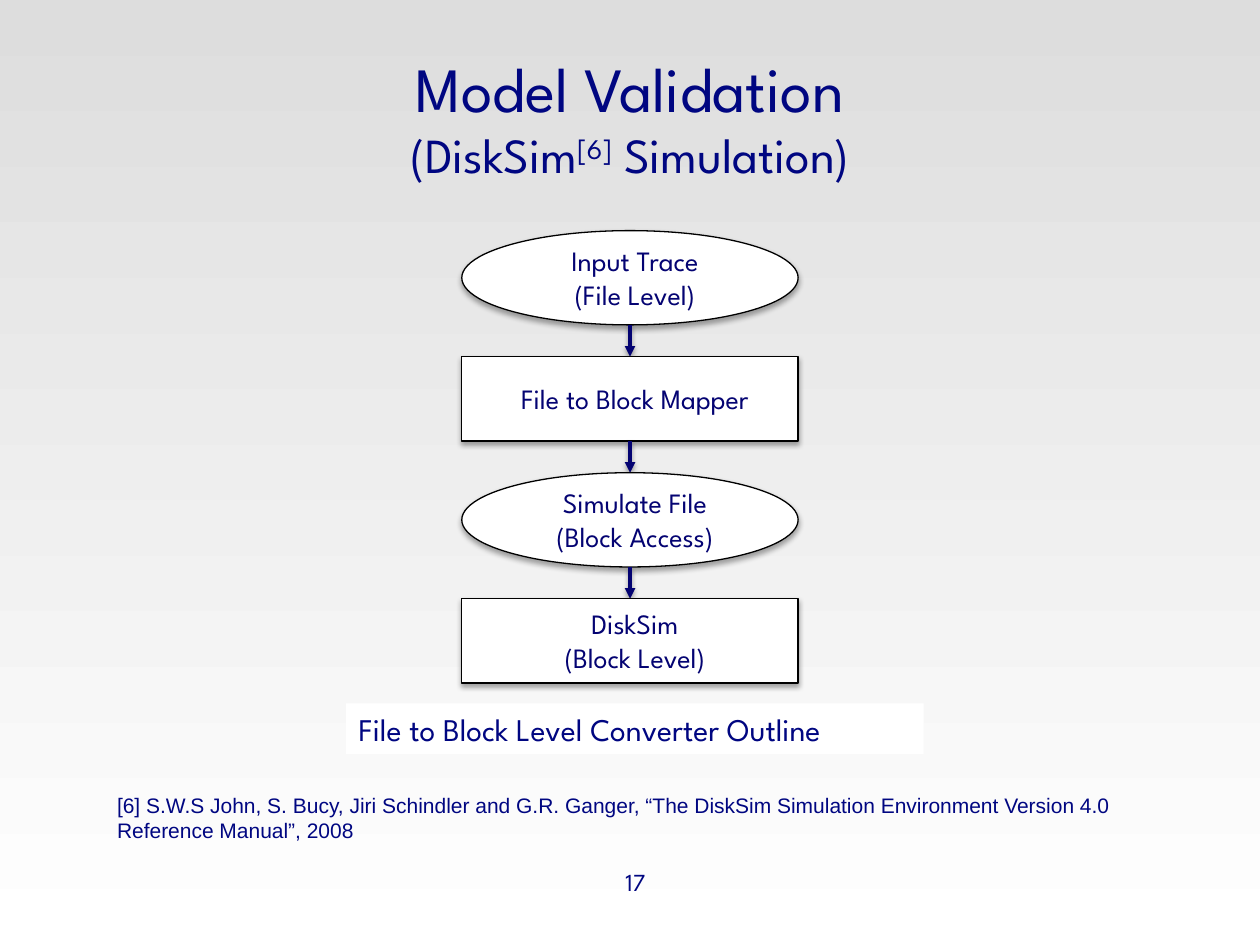
from dataclasses import dataclass

from lxml import etree
from pptx import Presentation
from pptx import util as u
from pptx.dml.color import RGBColor
from pptx.enum import shapes, text
from pptx.oxml import ns


@dataclass(frozen=True)
class Theme:
    """Colours, fonts and type sizes of the slide."""
    navy: str = "000681"
    ink: str = "040372"
    black: str = "000000"
    white: str = "FFFFFF"
    grey: str = "DDDDDD"
    font: str = "League Spartan"
    plain: str = "Arial"
    title: int = 36
    subtitle: int = 28
    caption: int = 18
    label: int = 16
    number: int = 14
    note: int = 12


def add_run(p, content, *, size, color, font, baseline=None):
    """Append a formatted run to a paragraph."""
    r = p.add_run()
    r.text = content
    r.font.size = u.Pt(size)
    r.font.name = font
    r.font.color.rgb = RGBColor.from_string(color)
    if baseline:
        r.font._element.set("baseline", str(baseline * 1000))


def add_shadow(sp, alpha, dist):
    """Give a shape or connector a soft shadow below it."""
    effects = etree.SubElement(sp._element.spPr, ns.qn("a:effectLst"))
    shadow = etree.SubElement(
        effects, ns.qn("a:outerShdw"), blurRad=str(u.Pt(3.1)), dist=str(u.Pt(dist)),
        dir="5400000", algn="ctr", rotWithShape="0")
    color = etree.SubElement(shadow, ns.qn("a:srgbClr"), val="000000")
    etree.SubElement(color, ns.qn("a:alpha"), val=str(alpha * 1000))


class Deck:
    """Holds the theme and the current slide."""

    def __init__(self, prs, theme):
        self.theme = theme
        self.slide = prs.slides.add_slide(prs.slide_layouts[5])

    def background(self):
        """Fill the background from grey at the top to white."""
        fill = self.slide.background.fill
        fill.gradient()
        fill.gradient_angle = 270
        colors = (self.theme.grey, self.theme.white)
        for stop, position, color in zip(fill.gradient_stops, (0, 1), colors):
            stop.position = position
            stop.color.rgb = RGBColor.from_string(color)

    def title(self, heading, parts, left, top, width, height):
        """Write the heading and, below it, a subtitle of (text, baseline) parts."""
        t = self.theme
        sp = self.slide.shapes.title
        sp.left, sp.top, sp.width, sp.height = map(u.Cm, (left, top, width, height))
        tf = sp.text_frame
        tf.vertical_anchor = text.MSO_ANCHOR.MIDDLE
        p = tf.paragraphs[0]
        p.alignment = text.PP_ALIGN.CENTER
        add_run(p, heading, size=t.title, color=t.navy, font=t.font)
        p.add_line_break()
        for part, baseline in parts:
            add_run(p, part, size=t.subtitle, color=t.navy, font=t.font, baseline=baseline)

    def textbox(self, lines, left, top, width, height, *, size, color=None,
                font=None, align=text.PP_ALIGN.CENTER, fill=None):
        """Add a wrapped text box with one paragraph per line."""
        t = self.theme
        sp = self.slide.shapes.add_textbox(*map(u.Cm, (left, top, width, height)))
        if fill:
            sp.fill.solid()
            sp.fill.fore_color.rgb = RGBColor.from_string(fill)
        tf = sp.text_frame
        tf.word_wrap = True
        for i, line in enumerate(lines):
            p = tf.add_paragraph() if i else tf.paragraphs[0]
            p.alignment = align
            add_run(p, line, size=size, color=color or t.navy, font=font or t.font)

    def node(self, kind, lines, center, top, width, height, label_width):
        """Add a flowchart node with its label."""
        t = self.theme
        sp = self.slide.shapes.add_shape(
            kind, *map(u.Cm, (center - width / 2, top, width, height)))
        sp.fill.solid()
        sp.fill.fore_color.rgb = RGBColor.from_string(t.white)
        sp.line.color.rgb = RGBColor.from_string(t.black)
        sp.line.width = u.Pt(0.75)
        add_shadow(sp, 35, 1.8)
        label_height = 0.25 + 0.69 * len(lines)
        self.textbox(lines, center + 0.1 - label_width / 2,
                     top + (height - label_height) / 2, label_width, label_height,
                     size=t.label, color=t.ink)

    def arrow(self, x, top, bottom):
        """Add a downward arrow."""
        sp = self.slide.shapes.add_connector(
            shapes.MSO_CONNECTOR.STRAIGHT, *map(u.Cm, (x, top, x, bottom)))
        sp.line.color.rgb = RGBColor.from_string(self.theme.ink)
        sp.line.width = u.Pt(2)
        etree.SubElement(sp.line._get_or_add_ln(), ns.qn("a:tailEnd"), type="triangle")
        add_shadow(sp, 38, 1.6)


def main():
    """Build the slide and save it."""
    prs = Presentation()
    prs.slide_width, prs.slide_height = u.Cm(25.4), u.Cm(19.05)
    theme = Theme()
    deck = Deck(prs, theme)
    left = text.PP_ALIGN.LEFT

    deck.background()
    deck.title("Model Validation",
               [("(DiskSim", None), ("[6]", 30), (" Simulation)", None)],
               1.27, 0.76, 22.86, 3.18)
    deck.textbox(["17"], 11.86, 17.35, 1.9, 1.32, size=theme.number)
    deck.textbox(["[6] S.W.S John, S. Bucy, Jiri Schindler and G.R. Ganger, “The DiskSim "
                  "Simulation Environment Version 4.0 Reference Manual”, 2008"],
                 2.11, 15.85, 21.16, 1.3, size=theme.note, font=theme.plain, align=left)

    center, width, gap, top = 12.7, 6.78, 0.64, 4.65
    oval, box = shapes.MSO_SHAPE.OVAL, shapes.MSO_SHAPE.RECTANGLE
    heights = {oval: 1.9, box: 1.7}
    steps = [
        (oval, ["Input Trace", "(File Level)"], 4.02),
        (box, ["File to Block Mapper"], 6.15),
        (oval, ["Simulate File", "(Block Access)"], 4.65),
        (box, ["DiskSim", "(Block Level)"], 3.99),
    ]
    for i, (kind, lines, label_width) in enumerate(steps):
        if i:
            deck.arrow(center, top - gap, top)
        deck.node(kind, lines, center, top, width, heights[kind], label_width)
        top += heights[kind] + gap

    deck.textbox(["File to Block Level Converter Outline"], 6.98, 14.18, 11.64, 1.02,
                 size=theme.caption, align=left, fill=theme.white)
    prs.save("out.pptx")


if __name__ == "__main__":
    main()
